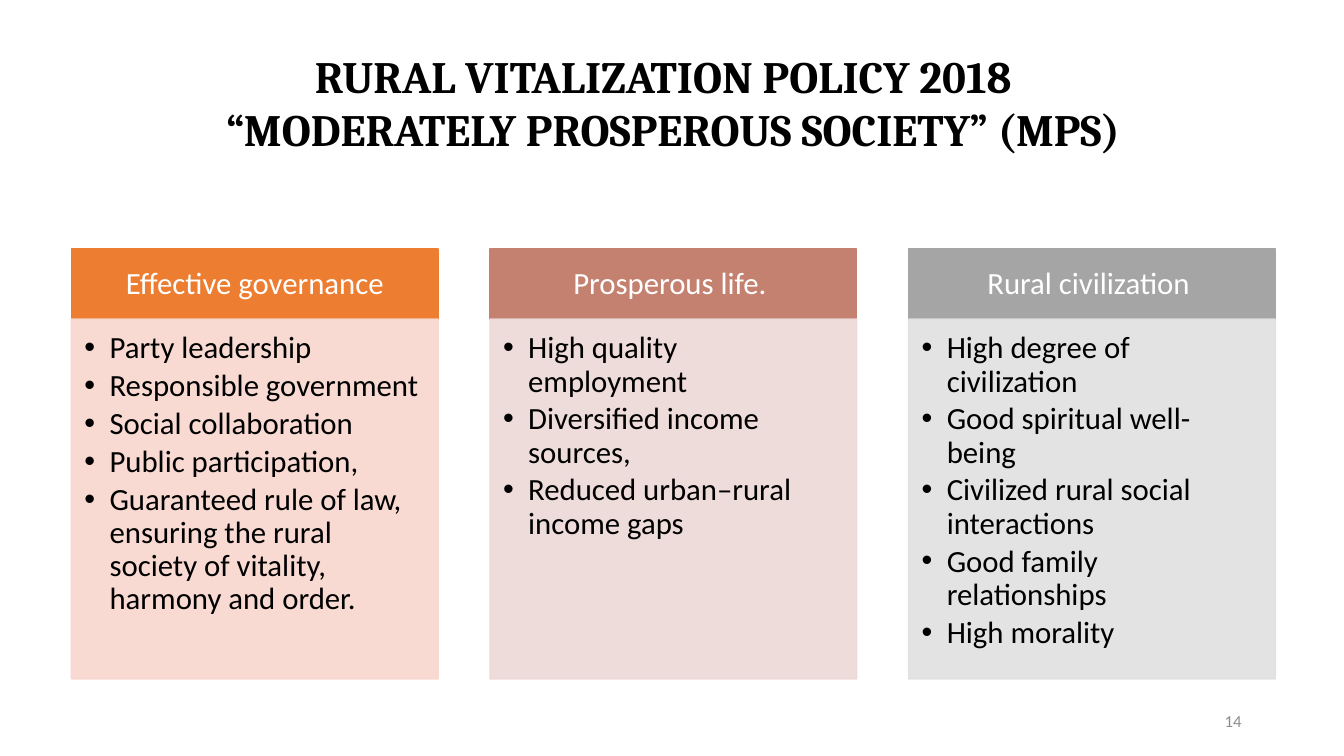
from lxml import etree
from pptx import Presentation
from pptx.dml.color import RGBColor
from pptx.enum import shapes, text
from pptx.oxml import ns
from pptx.util import Pt

# Content
TITLE = ["RURAL VITALIZATION POLICY 2018",
         "  “MODERATELY PROSPEROUS SOCIETY” (MPS)"]
PAGE = "14"
CARDS = [
    ("Effective governance", "ED7D31", "F8D7CE", [
        "Party leadership",
        "Responsible government",
        "Social collaboration",
        "Public participation, ",
        "Guaranteed rule of law, ensuring the rural society of "
        "vitality, harmony and order. "]),
    ("Prosperous life. ", "C48170", "EDD9D7", [
        "High quality employment",
        "Diversified income sources, ",
        "Reduced urban–rural income gaps"]),
    ("Rural civilization ", "A5A5A5", "E1E1E1", [
        "High degree of civilization",
        "Good spiritual well-being",
        "Civilized rural social interactions",
        "Good family relationships",
        "High morality"]),
]

THEME = {
    "title": ("Cambria", 32, "000000", True),
    "head": ("Calibri", 22, "FFFFFF", False),
    "body": ("Calibri", 22, "000000", False),
    "page": ("Calibri", 12, "8C8C8C", False),
    "alpha": 90,
}

# Layout in points
LEFT, TOP, WIDTH, STEP = 51, 178, 262, 299
HEAD, BODY, INDENT = 50, 257, 18

deck = Presentation()
deck.slide_width, deck.slide_height = Pt(960), Pt(540)
slide = deck.slides.add_slide(deck.slide_layouts[6])


def write(shape, lines, style, align, anchor, pads=(7.2, 3.6, 7.2, 3.6)):
    font, size, color, bold = THEME[style]
    frame = shape.text_frame
    frame.word_wrap = True
    frame.vertical_anchor = anchor
    (frame.margin_left, frame.margin_top,
     frame.margin_right, frame.margin_bottom) = map(Pt, pads)
    frame.text = "\n".join(lines)
    for para in frame.paragraphs:
        para.alignment = align
        for run in para.runs:
            run.font.name, run.font.size, run.font.bold = font, Pt(size), bold
            run.font.color.rgb = RGBColor.from_string(color)
    return frame.paragraphs


def panel(x, y, height, color):
    rect = slide.shapes.add_shape(shapes.MSO_SHAPE.RECTANGLE,
                                  Pt(x), Pt(y), Pt(WIDTH), Pt(height))
    rect.shadow.inherit = False
    rect.fill.solid()
    rect.fill.fore_color.rgb = RGBColor.from_string(color)
    rect.line.color.rgb = RGBColor.from_string(color)
    rect.line.width = Pt(1)
    return rect


def fade(shape):
    for color in shape.element.spPr.iter(ns.qn("a:srgbClr")):
        etree.SubElement(color, ns.qn("a:alpha"),
                         val=str(THEME["alpha"] * 1000))


def space(para, after):
    para.line_spacing = 0.9
    para.space_after = Pt(after)


def bullet(para):
    para.level = 1
    props = para._p.get_or_add_pPr()
    props.set("marL", str(Pt(INDENT)))
    props.set("indent", str(-Pt(INDENT)))
    etree.SubElement(props, ns.qn("a:buFont"), typeface="Arial")
    etree.SubElement(props, ns.qn("a:buChar"), char="•")


# Cards
for i, (name, dark, pale, points) in enumerate(CARDS):
    x = LEFT + i * STEP
    head = panel(x, TOP, HEAD, dark)
    for para in write(head, [name], "head", text.PP_ALIGN.CENTER,
                      text.MSO_ANCHOR.MIDDLE, (12.3, 7, 12.3, 7)):
        space(para, 7.7)
    body = panel(x, TOP + HEAD, BODY, pale)
    fade(body)
    for para in write(body, points, "body", text.PP_ALIGN.LEFT,
                      text.MSO_ANCHOR.TOP, (9.3, 9.3, 12.3, 14)):
        space(para, 3.3)
        bullet(para)

# Title and page number
title = slide.shapes.add_textbox(Pt(28), Pt(31), Pt(892), Pt(85))
write(title, TITLE, "title", text.PP_ALIGN.CENTER, text.MSO_ANCHOR.TOP)
page = slide.shapes.add_textbox(Pt(678), Pt(500.5), Pt(216), Pt(28.8))
write(page, [PAGE], "page", text.PP_ALIGN.RIGHT, text.MSO_ANCHOR.MIDDLE)

deck.save("out.pptx")
